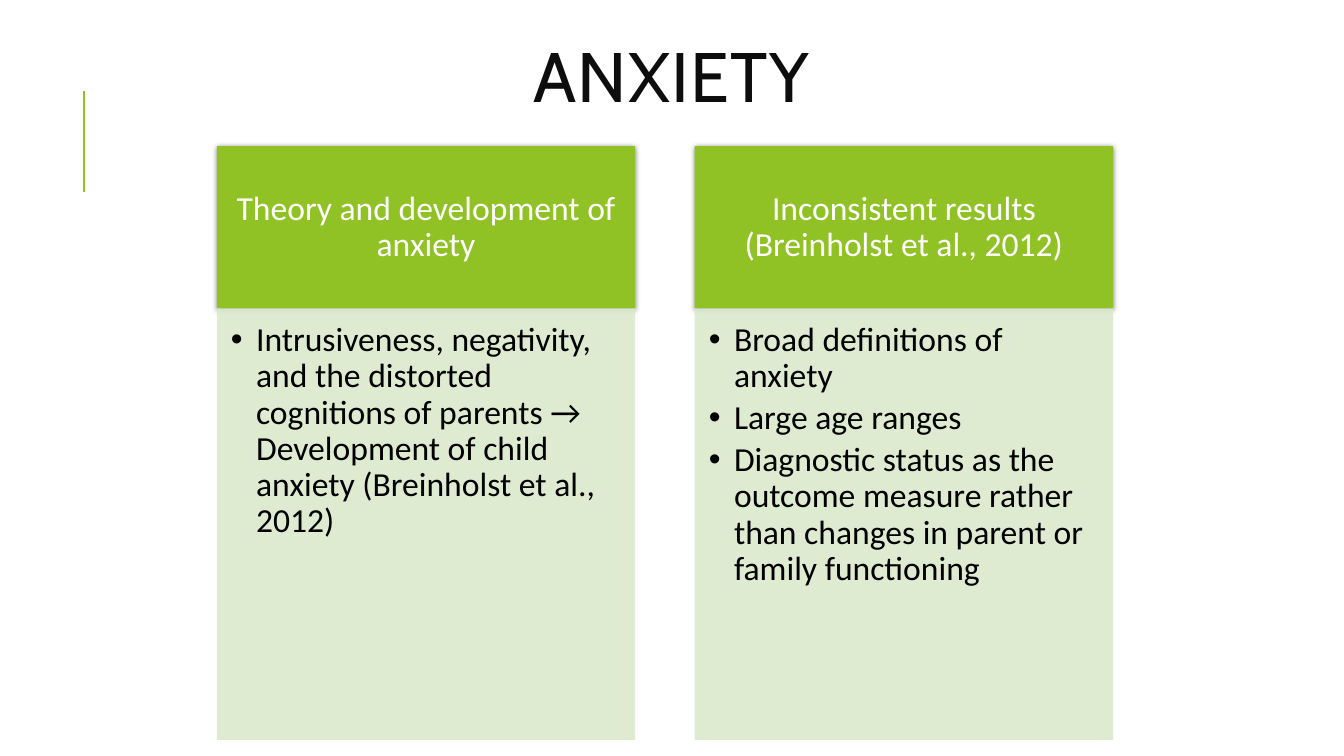
from dataclasses import dataclass

from lxml.etree import SubElement
from pptx import Presentation
from pptx.dml.color import RGBColor
from pptx.enum.shapes import MSO_CONNECTOR, MSO_SHAPE
from pptx.enum.text import MSO_ANCHOR, PP_ALIGN
from pptx.oxml.ns import qn
from pptx.util import Inches, Pt

COLORS = {
    "green": "90C226",
    "pale_green": "DBE9CD",
    "title": "0D0D0D",
    "white": "FFFFFF",
    "black": "000000",
}
COLUMN_LEFT, COLUMN_STEP, COLUMN_WIDTH = 2.15, 4.74, 4.15
HEADING_TOP, HEADING_HEIGHT, BODY_HEIGHT = 1.45, 1.61, 4.28


@dataclass
class Topic:
    heading: str
    points: list[str]


TOPICS = [
    Topic(
        "Theory and development of anxiety",
        ["Intrusiveness, negativity, and the distorted cognitions of parents → "
         "Development of child anxiety (Breinholst et al., 2012)"],
    ),
    Topic(
        "Inconsistent results (Breinholst et al., 2012)",
        ["Broad definitions of anxiety",
         "Large age ranges",
         "Diagnostic status as the outcome measure rather than changes in "
         "parent or family functioning"],
    ),
]


def rgb(name: str) -> RGBColor:
    return RGBColor.from_string(COLORS[name])


def write(shape, lines: list[str], *, color: str, size: float = 24,
          font: str = "Calibri", align=PP_ALIGN.LEFT, anchor=MSO_ANCHOR.TOP,
          insets: tuple = (0.1, 0.05, 0.1, 0.05), line_spacing: float = 0.9,
          space_after: float = 0, bulleted: bool = False,
          tracking: int = 0) -> None:
    """Fill a shape with formatted paragraphs; tracking is in 1/100 pt."""
    frame = shape.text_frame
    frame.word_wrap = True
    frame.vertical_anchor = anchor
    (frame.margin_left, frame.margin_top,
     frame.margin_right, frame.margin_bottom) = map(Inches, insets)
    for index, line in enumerate(lines):
        paragraph = frame.add_paragraph() if index else frame.paragraphs[0]
        paragraph.alignment = align
        paragraph.line_spacing = line_spacing
        paragraph.space_before = Pt(0)
        paragraph.space_after = Pt(space_after)
        run = paragraph.add_run()
        run.text = line
        run.font.name = font
        run.font.size = Pt(size)
        run.font.color.rgb = rgb(color)
        if tracking:
            run.font._element.set("spc", str(tracking))
        if bulleted:
            properties = paragraph._p.get_or_add_pPr()
            properties.set("marL", str(Inches(0.25)))
            properties.set("indent", str(Inches(-0.25)))
            SubElement(properties, qn("a:buFont"), typeface="Arial")
            SubElement(properties, qn("a:buChar"), char="•")


def add_panel(slide, left: float, top: float, height: float, color: str):
    panel = slide.shapes.add_shape(
        MSO_SHAPE.RECTANGLE, Inches(left), Inches(top),
        Inches(COLUMN_WIDTH), Inches(height))
    panel.fill.solid()
    panel.fill.fore_color.rgb = rgb(color)
    panel.line.fill.background()
    panel.shadow.inherit = False
    return panel


def add_soft_shadow(panel) -> None:
    effects = panel._element.spPr.find(qn("a:effectLst"))
    shadow = SubElement(effects, qn("a:outerShdw"), blurRad=str(Pt(4)),
                        dist=str(Pt(1)), dir="5400000", rotWithShape="0")
    tint = SubElement(shadow, qn("a:srgbClr"), val=COLORS["black"])
    SubElement(tint, qn("a:alpha"), val="50000")


def add_topic(slide, topic: Topic, left: float) -> None:
    heading = add_panel(slide, left, HEADING_TOP, HEADING_HEIGHT, "green")
    add_soft_shadow(heading)
    write(heading, [topic.heading], color="white", align=PP_ALIGN.CENTER,
          anchor=MSO_ANCHOR.MIDDLE, insets=(0.19, 0.11, 0.19, 0.11))

    body = add_panel(slide, left, HEADING_TOP + HEADING_HEIGHT, BODY_HEIGHT,
                     "pale_green")
    fill_color = body._element.spPr.find(qn("a:solidFill"))[0]
    SubElement(fill_color, qn("a:alpha"), val="90000")
    write(body, topic.points, color="black", bulleted=True, space_after=4,
          insets=(0.14, 0.14, 0.19, 0.21))


def main() -> None:
    presentation = Presentation()
    presentation.slide_width = Inches(13.33)
    presentation.slide_height = Inches(7.5)
    slide = presentation.slides.add_slide(presentation.slide_layouts[6])

    # Accent line
    accent = slide.shapes.add_connector(
        MSO_CONNECTOR.STRAIGHT, Inches(0.83), Inches(1.9),
        Inches(0.83), Inches(0.9))
    accent.line.color.rgb = rgb("green")
    accent.line.width = Pt(1.5)
    SubElement(accent._element.spPr, qn("a:effectLst"))

    # Title
    title = slide.shapes.add_textbox(
        Inches(5.19), Inches(0), Inches(10.63), Inches(1.64))
    write(title, ["ANXIETY"], color="title", size=50, font="Cabin",
          anchor=MSO_ANCHOR.MIDDLE, line_spacing=0.8, tracking=100)

    # Topic columns
    for index, topic in enumerate(TOPICS):
        add_topic(slide, topic, COLUMN_LEFT + index * COLUMN_STEP)

    presentation.save("out.pptx")


if __name__ == "__main__":
    main()
